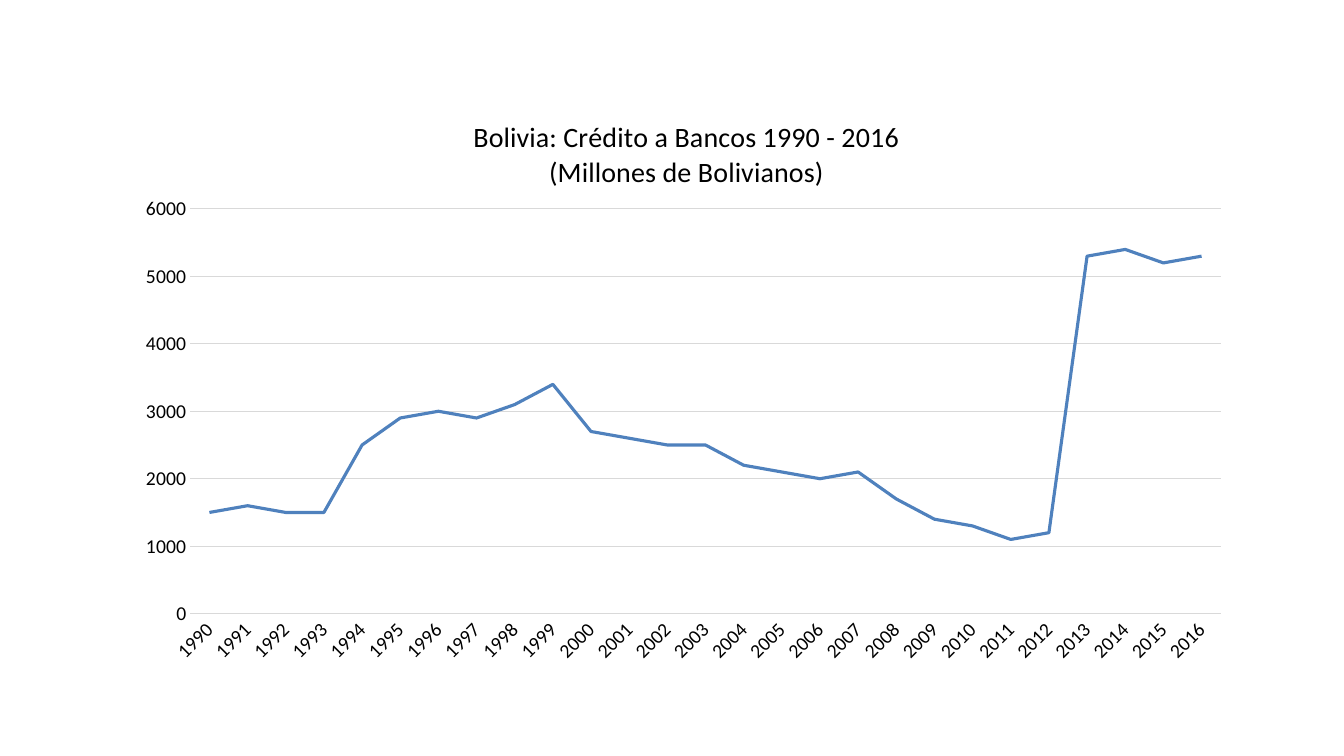
from lxml.etree import SubElement
from pptx import Presentation
from pptx.chart.data import CategoryChartData
from pptx.dml.color import RGBColor
from pptx.enum.chart import XL_CHART_TYPE, XL_TICK_MARK
from pptx.oxml import parse_xml
from pptx.oxml.ns import nsdecls, qn
from pptx.util import Pt

YEARS = [str(year) for year in range(1990, 2017)]
CREDIT = [1500, 1600, 1500, 1500, 2500, 2900, 3000, 2900, 3100,
          3400, 2700, 2600, 2500, 2500, 2200, 2100, 2000, 2100,
          1700, 1400, 1300, 1100, 1200, 5300, 5400, 5200, 5300]
TITLE = ["Bolivia: Crédito a Bancos 1990 - 2016", "(Millones de Bolivianos)"]


def color(code):
    """Turn a hex string into a colour."""
    return RGBColor.from_string(code)


class Deck:
    """Holds the style and the current slide."""

    face, ink, grid, blue = "Calibri", "000000", "D9D9D9", "4F81BD"

    def __init__(self):
        """Start a blank wide slide."""
        self.show = Presentation()
        self.show.slide_width, self.show.slide_height = Pt(960), Pt(540)
        self.slide = self.show.slides.add_slide(self.show.slide_layouts[6])

    def font(self, font, size):
        """Apply the text style at a given size."""
        font.name, font.size, font.bold = self.face, Pt(size), False
        font.color.rgb = color(self.ink)

    def line(self, line, code, width):
        """Colour a line and set its width."""
        line.color.rgb = color(code)
        line.width = Pt(width)

    def place(self, part, index, **spots):
        """Fix a chart part at fractions of the chart area."""
        for old in part.findall(qn("c:layout")):
            part.remove(old)
        layout = parse_xml(f"<c:layout {nsdecls('c')}><c:manualLayout/></c:layout>")
        for name, value in spots.items():
            SubElement(layout[0], qn(f"c:{name}")).set("val", str(value))
        part.insert(index, layout)

    def title(self, chart, lines):
        """Write the chart title, one paragraph a line."""
        frame = chart.chart_title.text_frame
        for i, text in enumerate(lines):
            para = frame.add_paragraph() if i else frame.paragraphs[0]
            para.text = text
            self.font(para.font, 20)
        self.place(chart.chart_title._element, 1,
                   xMode="edge", yMode="edge", x=0.31, y=0.04)

    def axes(self, chart):
        """Style both axes and the grid."""
        years, sums = chart.category_axis, chart.value_axis
        for axis in (years, sums):
            axis.major_tick_mark = axis.minor_tick_mark = XL_TICK_MARK.NONE
            self.font(axis.tick_labels.font, 14)
        self.line(years.format.line, self.grid, 0.75)
        body = years._element.find(qn("c:txPr")).find(qn("a:bodyPr"))
        body.set("rot", "-2700000")
        sums.minimum_scale, sums.maximum_scale, sums.major_unit = 0, 6000, 1000
        sums.tick_labels.number_format = "0"
        sums.tick_labels.number_format_is_linked = False
        sums.format.line.fill.background()
        self.line(sums.major_gridlines.format.line, self.grid, 0.75)

    def chart(self, lines, cats, vals, box):
        """Add a titled line chart."""
        data = CategoryChartData()
        data.categories = cats
        data.add_series("Series 1", vals)
        chart = self.slide.shapes.add_chart(
            XL_CHART_TYPE.LINE, *map(Pt, box), data).chart
        self.font(chart.font, 10)
        chart.has_legend = False
        self.title(chart, lines)
        self.axes(chart)
        plot = chart.plots[0]
        plot.vary_by_categories = False
        plot.series[0].smooth = False
        self.line(plot.series[0].format.line, self.blue, 2.25)
        self.place(chart._chartSpace.chart.plotArea, 0, layoutTarget="inner",
                   xMode="edge", yMode="edge", x=0.06, y=0.2, w=0.92, h=0.69)


def main():
    """Build and save the slide."""
    deck = Deck()
    deck.chart(TITLE, YEARS, CREDIT, (88, 65.5, 800, 419))
    deck.show.save("out.pptx")


if __name__ == "__main__":
    main()
